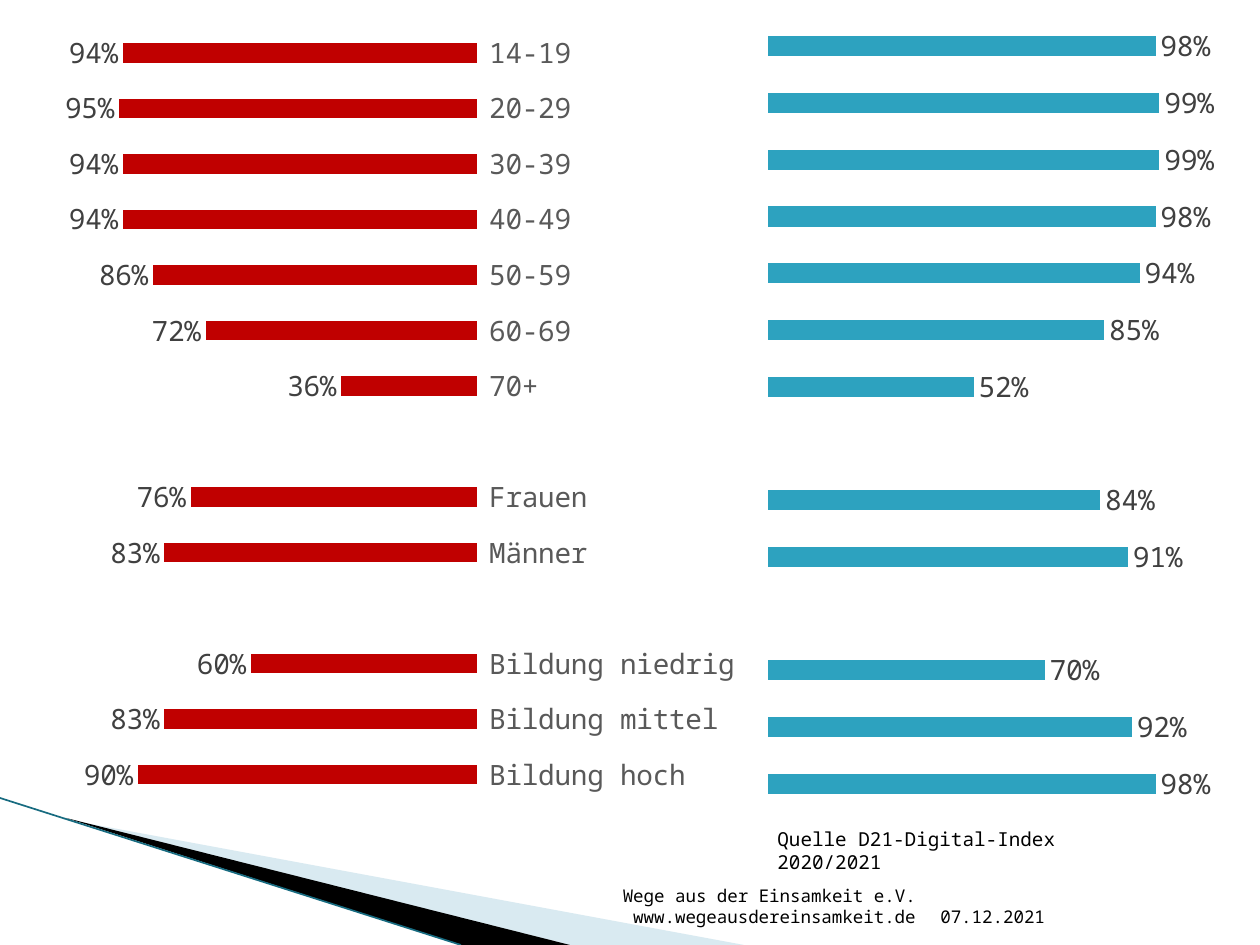
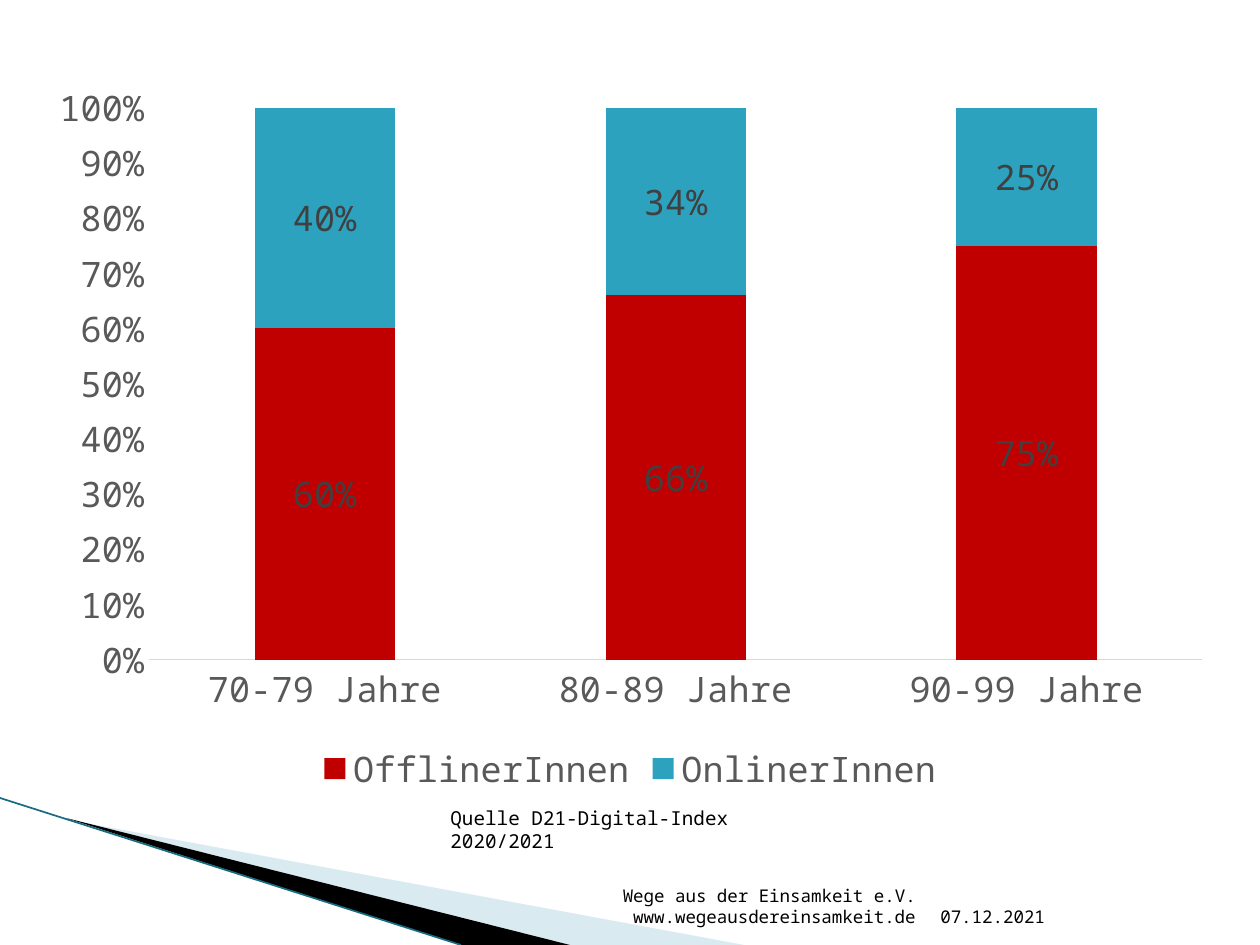
"""Build two slides on online and offline shares by age, gender and education."""
from lxml.etree import SubElement
from pptx import Presentation
from pptx.chart.data import CategoryChartData
from pptx.dml.color import RGBColor
from pptx.enum.chart import XL_CHART_TYPE as Chart, XL_LABEL_POSITION as LabelPos
from pptx.enum.chart import XL_LEGEND_POSITION as LegendPos
from pptx.enum.chart import XL_TICK_LABEL_POSITION as TickLabelPos, XL_TICK_MARK as TickMark
from pptx.enum.shapes import MSO_CONNECTOR
from pptx.enum.text import MSO_ANCHOR as Anchor, MSO_AUTO_SIZE as AutoSize, PP_ALIGN as Align
from pptx.oxml import parse_xml
from pptx.oxml.ns import nsdecls, qn
from pptx.util import Pt

FONT = "Noto Sans Mono"
COLORS = {"offline": "C00000", "online": "2DA2BF", "axis": "595959", "value": "404040",
          "baseline": "D9D9D9", "text": "000000", "pale": "A0CBDC", "edge": "176B80"}
WIDTH, HEIGHT = 1260, 945
SOURCE = "Quelle D21-Digital-Index 2020/2021"
GROUPS = ["14-19", "20-29", "30-39", "40-49", "50-59", "60-69", "70+", "", "Frauen", "Männer",
          "", "Bildung niedrig", "Bildung mittel", "Bildung hoch"]
LEFT_SHARES = [94, 95, 94, 94, 86, 72, 36, None, 76, 83, None, 60, 83, 90]
RIGHT_SHARES = [0.98, 0.99, 0.99, 0.98, 0.94, 0.85, 0.52, None, 0.84, 0.91, None, 0.7, 0.92, 0.98]


def px(length):
    """Turn px into EMU."""
    return round(length * 914400 / 126)


def color(name):
    """Return a palette colour."""
    return RGBColor.from_string(COLORS[name])


def style(font, size, name):
    """Set face, size and colour of a font."""
    font.name, font.size = FONT, Pt(size)
    font.color.rgb = color(name)


def add_text(slide, box, text, size, anchor=Anchor.TOP, align=Align.LEFT, fit=AutoSize.NONE):
    """Add one paragraph of wrapped text."""
    frame = slide.shapes.add_textbox(*map(px, box)).text_frame
    frame.word_wrap, frame.auto_size, frame.vertical_anchor = True, fit, anchor
    paragraph = frame.paragraphs[0]
    paragraph.text, paragraph.alignment = text, align
    style(paragraph.font, size, "text")


def add_wedge(slide, points, fill, alpha=None):
    """Add a filled triangle."""
    builder = slide.shapes.build_freeform(*points[0], scale=px(1000) / 1000)
    builder.add_line_segments(points[1:])
    wedge = builder.convert_to_shape()
    wedge.shadow.inherit = False
    wedge.line.fill.background()
    wedge.fill.solid()
    wedge.fill.fore_color.rgb = color(fill)
    if alpha:
        fill_color = wedge.fill._xPr.find(qn("a:solidFill"))[0]
        SubElement(fill_color, qn("a:alpha")).set("val", str(alpha * 1000))


def add_corner(slide, box):
    """Draw the pointed band in the lower left corner."""
    left, top, width, height = box
    bottom, right = top + height, left + width
    add_wedge(slide, [(left + 69, top + 22), (right, bottom), (left + 570, bottom)], "pale", 40)
    add_wedge(slide, [(left + 66, top + 20), (left + 570, bottom), (left + 461, bottom)], "text")
    edge = slide.shapes.add_connector(MSO_CONNECTOR.STRAIGHT, px(left), px(top),
                                      px(left + 461), px(bottom))
    edge.line.color.rgb, edge.line.width = color("edge"), Pt(0.95)
    SubElement(edge._element.spPr, qn("a:effectLst"))


def add_footer(slide, box):
    """Place the association on the left and the date on the right."""
    left, top, width, height = box
    split = 324
    add_text(slide, (left, top, split, height),
             "Wege aus der Einsamkeit e.V. www.wegeausdereinsamkeit.de", 10, Anchor.BOTTOM, Align.RIGHT)
    add_text(slide, (left + split, top, width - split, height), "07.12.2021", 10, Anchor.BOTTOM)


def add_base(presentation, source_left, source_top):
    """Add a slide with corner, footer and source."""
    slide = presentation.slides.add_slide(presentation.slide_layouts[6])
    add_corner(slide, (0, 798, 744, HEIGHT - 798))
    add_footer(slide, (604, 883, 588, 50))
    add_text(slide, (source_left, source_top, 383, 37), SOURCE, 11, fit=AutoSize.SHAPE_TO_FIT_TEXT)
    return slide


def set_plot_area(chart, fractions):
    """Fix the inner plot area as fractions of the chart."""
    area = chart.element.find(".//" + qn("c:plotArea"))
    for layout in area.findall(qn("c:layout")):
        area.remove(layout)
    sizes = "".join(f'<c:{tag} val="{value}"/>' for tag, value in zip("xywh", fractions))
    area.insert(0, parse_xml(
        f'<c:layout {nsdecls("c")}><c:manualLayout><c:layoutTarget val="inner"/>'
        f'<c:xMode val="edge"/><c:yMode val="edge"/>{sizes}</c:manualLayout></c:layout>'))


def add_share_chart(slide, box, kind, categories, series, size, gap, limits, plot_area,
                    number_format="0%", position=LabelPos.OUTSIDE_END):
    """Add a chart whose series are (name, values, colour)."""
    data = CategoryChartData(number_format=number_format)
    data.categories = categories
    for name, values, _ in series:
        data.add_series(name, values)
    chart = slide.shapes.add_chart(kind, *map(px, box), data).chart
    style(chart.font, size, "text")
    chart.has_title = chart.has_legend = False
    set_plot_area(chart, plot_area)
    plot = chart.plots[0]
    plot.gap_width, plot.vary_by_categories = gap, False
    for bars, (_, _, fill) in zip(plot.series, series):
        bars.invert_if_negative = False
        bars.format.fill.solid()
        bars.format.fill.fore_color.rgb = color(fill)
        labels = bars.data_labels
        labels.show_value, labels.position = True, position
        labels.number_format, labels.number_format_is_linked = number_format, False
        style(labels.font, size, "value")
    for axis in (chart.category_axis, chart.value_axis):
        axis.has_major_gridlines = False
        axis.major_tick_mark = axis.minor_tick_mark = TickMark.NONE
        axis.format.line.fill.background()
        style(axis.tick_labels.font, size, "axis")
    chart.value_axis.minimum_scale, chart.value_axis.maximum_scale = limits
    return chart


def add_group_chart(slide, box, categories, values, fill, limits, plot_area, number_format):
    """Add horizontal bars by group, first group on top."""
    chart = add_share_chart(slide, box, Chart.BAR_CLUSTERED, categories, [("Series 1", values, fill)],
                            16, 182, limits, plot_area, number_format)
    chart.category_axis.reverse_order = True
    chart.value_axis.visible = False
    return chart


def build_groups(presentation):
    """Build the slide that sets two shares per group side by side."""
    slide = add_base(presentation, 765, 821)
    left_values = [None if share is None else -share for share in LEFT_SHARES]
    mirrored = add_group_chart(slide, (25, 18, 711, 803), GROUPS, left_values, "offline", (-100, 0),
                               (0.107, 0.009, 0.535, 0.968), '0"%";0"%"')
    mirrored.category_axis.tick_label_position = TickLabelPos.HIGH
    numbers = [str(number) for number in range(1, len(GROUPS) + 1)]
    plain = add_group_chart(slide, (766, 18, 480, 830), numbers, RIGHT_SHARES, "online", (0, 1.2),
                            (0.004, 0, 0.989, 0.957), "0%")
    plain.category_axis.visible = False


def build_ages(presentation):
    """Build the slide on the oldest age groups."""
    slide = add_base(presentation, 438, 800)
    offline = [0.6, 0.66, 0.75]
    online = [0.4, 0.34, 0.25]
    chart = add_share_chart(slide, (35, 69, 1191, 731), Chart.COLUMN_STACKED,
                            ["70-79 Jahre", "80-89 Jahre", "90-99 Jahre"],
                            [("OfflinerInnen", offline, "offline"), ("OnlinerInnen", online, "online")],
                            20, 150, (0, 1), (0.096, 0.053, 0.884, 0.755), position=LabelPos.CENTER)
    chart.plots[0].overlap = 100
    baseline = chart.category_axis.format.line
    baseline.color.rgb, baseline.width = color("baseline"), Pt(0.75)
    scale = chart.value_axis
    scale.major_unit = 0.1
    scale.tick_labels.number_format, scale.tick_labels.number_format_is_linked = "0%", False
    chart.has_legend = True
    chart.legend.position, chart.legend.include_in_layout = LegendPos.BOTTOM, False
    style(chart.legend.font, 20, "axis")


def main():
    """Build and save the presentation."""
    presentation = Presentation()
    presentation.slide_width, presentation.slide_height = px(WIDTH), px(HEIGHT)
    build_groups(presentation)
    build_ages(presentation)
    presentation.save("out.pptx")


if __name__ == "__main__":
    main()
